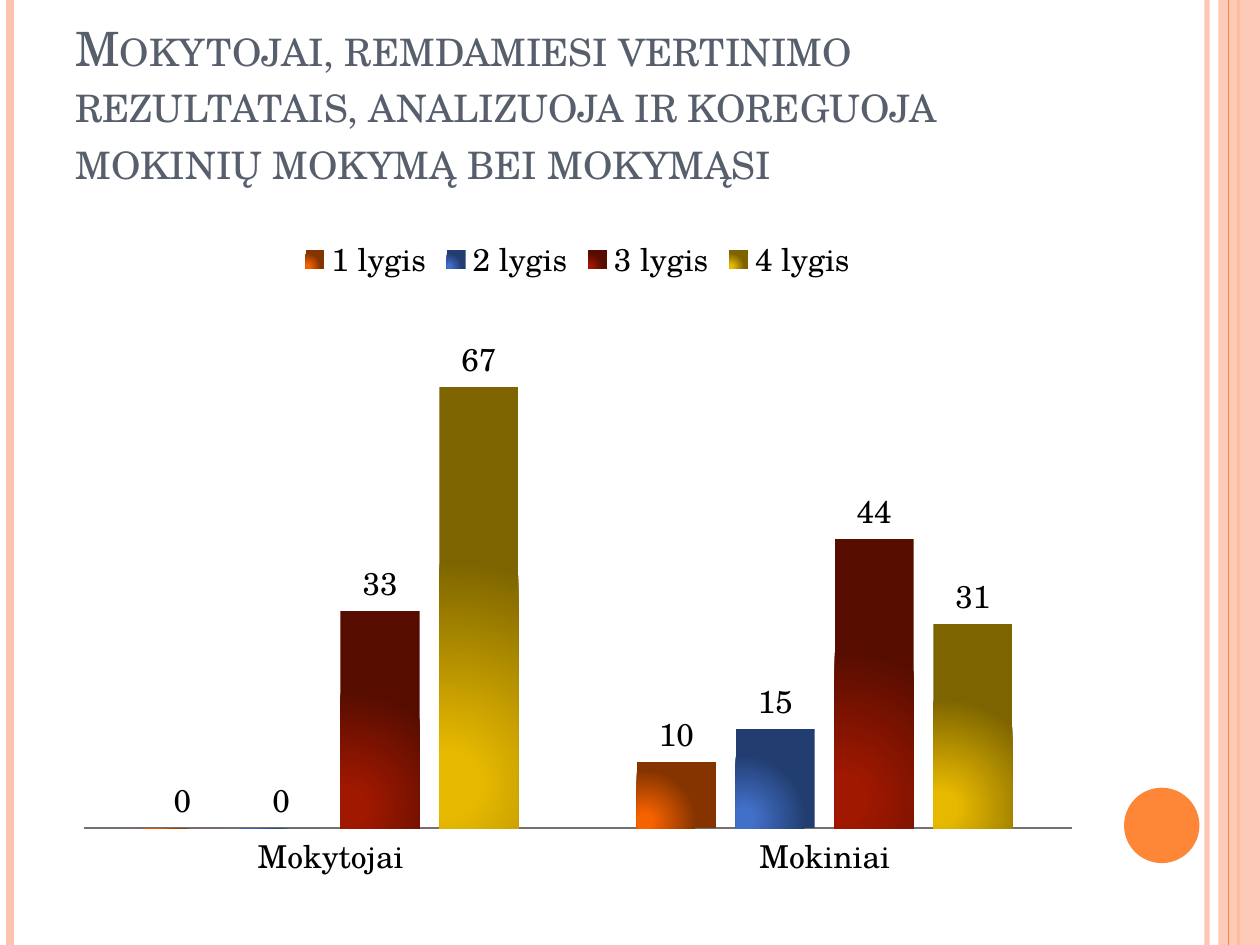
from lxml.etree import SubElement as Sub
from pptx import Presentation
from pptx.chart.data import CategoryChartData as Data
from pptx.dml.color import RGBColor as Rgb
from pptx.enum.chart import XL_CHART_TYPE as Kind, XL_LABEL_POSITION as Spot
from pptx.enum.chart import XL_LEGEND_POSITION as Side, XL_TICK_MARK as Tick
from pptx.enum.chart import XL_TICK_LABEL_POSITION as Place
from pptx.enum.shapes import MSO_CONNECTOR as Link, MSO_SHAPE as Form
from pptx.enum.text import MSO_ANCHOR as Anchor
from pptx.oxml import parse_xml as read
from pptx.oxml.ns import nsdecls, qn
from pptx.util import Cm, Pt

HUES = {"peach": "FEC3AE", "orange": "FE8637", "slate": "575F6D",
        "black": "000000", "axis": "757070"}
FACE = "TeX Gyre Schola"


def style(item, look):
    for key, value in look.items():
        setattr(item, key, value)


def fade(node, value):
    color = node.find(".//" + qn("a:srgbClr"))
    Sub(color, qn("a:alpha")).set("val", str(value * 1000))


deck = Presentation()
style(deck, {"slide_width": Cm(25.4), "slide_height": Cm(19.05)})
slide = deck.slides.add_slide(deck.slide_layouts[6])
shapes = slide.shapes

rules = [(24.33, "peach", 3, 93), (0.2, "peach", 4.5, 100),
         (24.97, "orange", 1.5, 100), (24.77, "orange", 0.75, 100)]
forms = [(Form.RECTANGLE, 24.56, 0, 0.84, 19.05, "peach", 87),
         (Form.OVAL, 22.66, 15.88, 1.52, 1.52, "orange", 100)]


def draw(form, left, top, wide, high, hue, alpha):
    shape = shapes.add_shape(form, Cm(left), Cm(top), Cm(wide), Cm(high))
    shape.shadow.inherit = False
    shape.fill.solid()
    shape.fill.fore_color.rgb = Rgb.from_string(HUES[hue])
    shape.line.fill.background()
    if alpha < 100:
        fade(shape.fill._xPr, alpha)


for step, (x, hue, width, alpha) in enumerate(rules):
    if step == 3:
        draw(*forms[0])
    rule = shapes.add_connector(Link.STRAIGHT, Cm(x), Cm(0), Cm(x), Cm(19.05))
    rule.line.color.rgb = Rgb.from_string(HUES[hue])
    rule.line.width = Pt(width)
    props = rule._element.spPr
    Sub(props, qn("a:effectLst"))
    if alpha < 100:
        fade(props, alpha)
draw(*forms[1])

frame = shapes.add_textbox(Cm(1.27), Cm(0.76), Cm(20.75), Cm(3.18)).text_frame
style(frame, {"word_wrap": True, "vertical_anchor": Anchor.BOTTOM})
run = frame.paragraphs[0].add_run()
run.text = ("Mokytojai, remdamiesi vertinimo rezultatais, analizuoja ir "
            "koreguoja mokinių mokymą bei mokymąsi")
style(run.font, {"size": Pt(27), "name": FACE})
run.font.color.rgb = Rgb.from_string(HUES["slate"])
run.font._element.set("cap", "small")

series = [("1 lygis", (0, 10), "F56200", "853400"),
          ("2 lygis", (0, 15), "4270C8", "223D70"),
          ("3 lygis", (33, 44), "A01800", "560D00"),
          ("4 lygis", (67, 31), "E6B800", "7D6400")]
data = Data()
data.categories = ["Mokytojai", "Mokiniai"]
for name, values, *_ in series:
    data.add_series(name, values)
chart = shapes.add_chart(Kind.COLUMN_CLUSTERED, Cm(1.27), Cm(4.45),
                         Cm(20.75), Cm(13.54), data).chart
style(chart, {"has_title": False, "has_legend": True})
style(chart.font, {"size": Pt(18), "name": FACE})
chart.font.color.rgb = Rgb.from_string(HUES["black"])
style(chart.legend, {"position": Side.TOP, "include_in_layout": False})
style(chart.value_axis, {"visible": False, "has_major_gridlines": False,
                         "minimum_scale": 0, "maximum_scale": 80})
base = chart.category_axis
style(base, {"major_tick_mark": Tick.NONE, "minor_tick_mark": Tick.NONE,
             "tick_label_position": Place.NEXT_TO_AXIS})
base.format.line.color.rgb = Rgb.from_string(HUES["axis"])
base.format.line.width = Pt(1)

plot = chart.plots[0]
style(plot, {"gap_width": 150, "overlap": -25, "vary_by_categories": False,
             "has_data_labels": True})
style(plot.data_labels, {"show_value": True, "position": Spot.OUTSIDE_END})
for bar, (_, _, light, dark) in zip(plot.series, series):
    bar.invert_if_negative = False
    stops = "".join(f'<a:gs pos="{pos}"><a:srgbClr val="{hue}"/></a:gs>'
                    for pos, hue in ((0, light), (15000, light), (100000, dark)))
    glow = read(f'<a:gradFill {nsdecls("a")} rotWithShape="1">'
                f'<a:gsLst>{stops}</a:gsLst><a:path path="circle">'
                '<a:fillToRect l="10000" t="90000" r="90000" b="10000"/>'
                '</a:path></a:gradFill>')
    bar.format.line.fill.background()
    bar._element.spPr.insert(0, glow)

deck.save("out.pptx")
